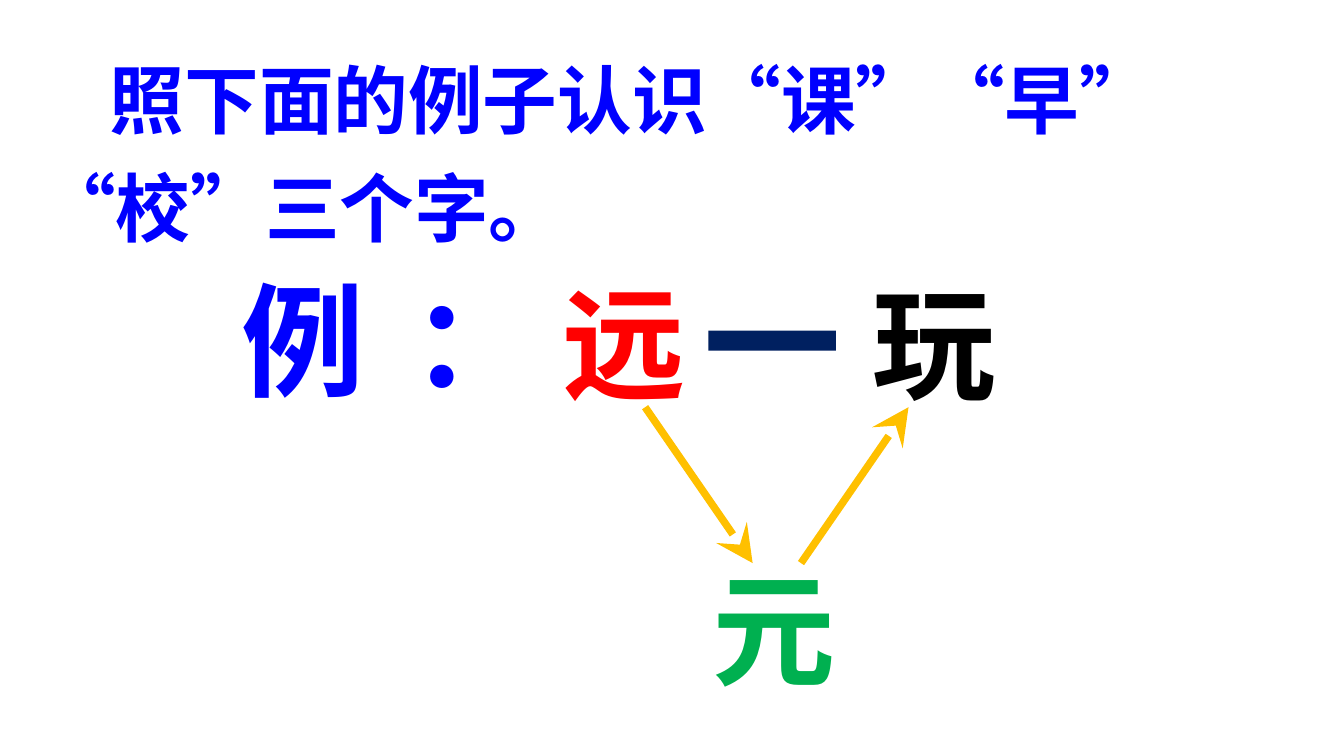
from lxml import etree
from pptx import Presentation
from pptx.dml.color import RGBColor
from pptx.enum import shapes, text
from pptx.oxml import ns
from pptx.util import Inches, Pt

FONT = "Noto Sans CJK SC"
COLORS = {
    "blue": "0000FF",
    "red": "FF0000",
    "black": "000000",
    "green": "00B050",
    "navy": "002060",
    "gold": "FFC000",
}


def color(name):
    return RGBColor.from_string(COLORS[name])


def add_text(slide, box, lines, size, color_name, line_spacing=None, tracking=0, indent=0):
    shape = slide.shapes.add_textbox(*map(Inches, box))
    frame = shape.text_frame
    frame.word_wrap = True
    frame.auto_size = text.MSO_AUTO_SIZE.SHAPE_TO_FIT_TEXT
    frame.text = "\n".join(lines)
    for paragraph in frame.paragraphs:
        if line_spacing:
            paragraph.line_spacing = line_spacing
        font = paragraph.font
        font.name = FONT
        font.size = Pt(size)
        font.bold = True
        font.color.rgb = color(color_name)
        properties = paragraph._p.get_or_add_pPr().find(ns.qn("a:defRPr"))
        properties.set("lang", "zh-CN")
        if tracking:
            properties.set("spc", str(tracking * 100))
        east_asian = etree.SubElement(properties, ns.qn("a:ea"))
        east_asian.set("typeface", FONT)
    if indent:
        frame.paragraphs[0]._p.pPr.set("indent", str(Inches(indent)))


def add_arrow(slide, start, end):
    arrow = slide.shapes.add_connector(
        shapes.MSO_CONNECTOR.STRAIGHT, *map(Inches, start + end))
    arrow.line.color.rgb = color("gold")
    arrow.line.width = Pt(4)
    head = etree.SubElement(arrow.line._get_or_add_ln(), ns.qn("a:tailEnd"))
    for name, value in (("type", "stealth"), ("w", "lg"), ("len", "lg")):
        head.set(name, value)
    etree.SubElement(arrow._element.spPr, ns.qn("a:effectLst"))


def add_instruction(slide, left, top, width, height):
    add_text(slide, (left, top, width, height),
             ["照下面的例子认识“课”“早”", "“校”三个字。"],
             40, "blue", line_spacing=1.2, indent=0.51)


def add_example(slide, left, top):
    characters = [
        ("例：", 0, 0, 2.51, "blue"),
        ("远", 2.39, 0.02, 1.32, "red"),
        ("玩", 4.69, 0.02, 1.32, "black"),
        ("元", 3.5, 2.15, 1.14, "green"),
    ]
    for character, x, y, width, color_name in characters:
        add_text(slide, (left + x, top + y, width, 1.21), [character],
                 66, color_name, tracking=25)

    dash = slide.shapes.add_shape(
        shapes.MSO_SHAPE.RECTANGLE,
        *map(Inches, (left + 3.57, top + 0.54, 0.95, 0.15)))
    dash.shadow.inherit = False
    dash.fill.solid()
    dash.fill.fore_color.rgb = color("navy")
    dash.line.fill.background()

    upper, lower, run = top + 1.11, top + 2.27, 0.8
    down, up = left + 3.1, left + 4.26
    add_arrow(slide, (down, upper), (down + run, lower))
    add_arrow(slide, (up, lower), (up + run, upper))


def main():
    presentation = Presentation()
    presentation.slide_width = Inches(10)
    presentation.slide_height = presentation.slide_width * 9 // 16
    slide = presentation.slides.add_slide(presentation.slide_layouts[6])
    add_instruction(slide, 0.21, 0.22, 9.44, 1.72)
    add_example(slide, 1.7, 1.92)
    presentation.save("out.pptx")


if __name__ == "__main__":
    main()
